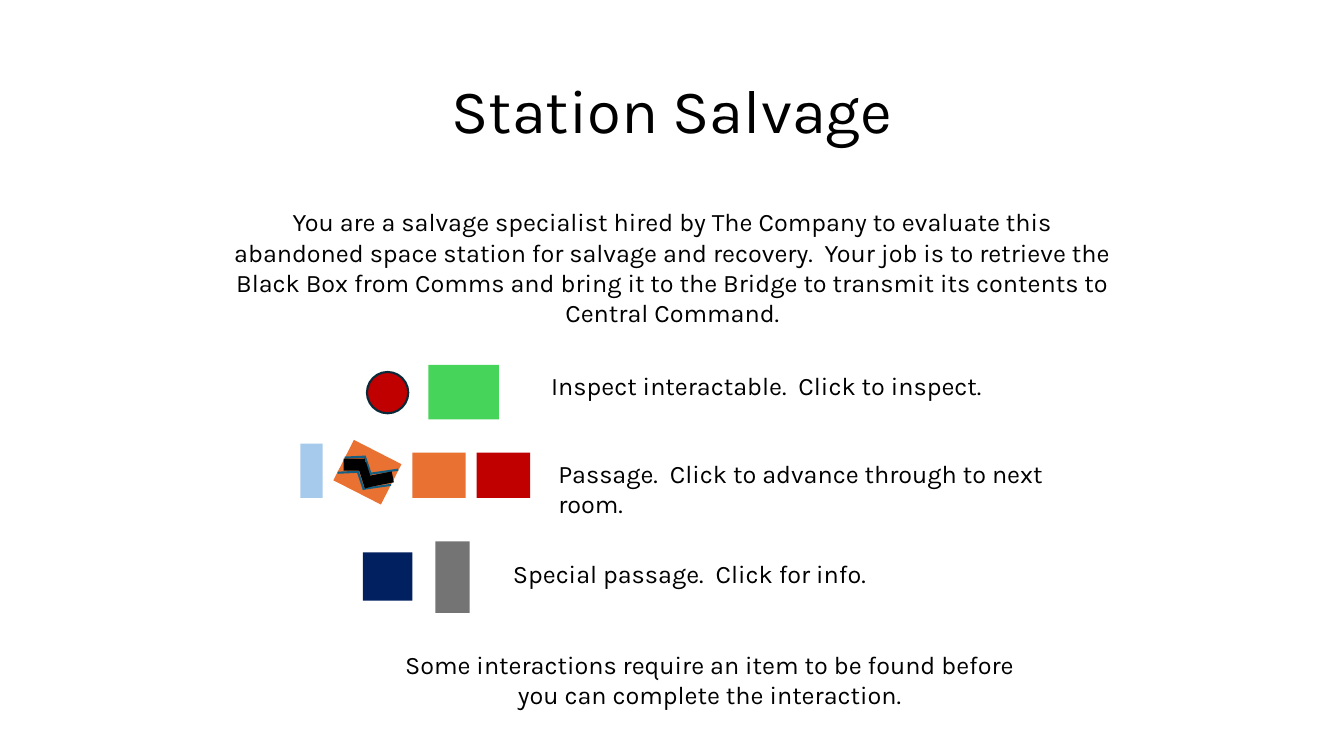
from lxml import etree
from pptx import Presentation, util as u
from pptx.dml.color import RGBColor
from pptx.enum import shapes, text
from pptx.oxml.ns import qn

FONT = "Karla"
BLACK, ORANGE, RED, EDGE = "000000", "E97132", "C00000", "156082"
RECT, OVAL = shapes.MSO_SHAPE.RECTANGLE, shapes.MSO_SHAPE.OVAL
CENTER = text.PP_ALIGN.CENTER


def color(value):
    return RGBColor.from_string(value)


def grid(*cells):
    """Turn columns and rows of a tenth of an inch into lengths."""
    return [u.Inches(cell / 10) for cell in cells]


def write(frame, words, size=18, align=None, spacing=None):
    para = frame.paragraphs[0]
    para.alignment = align
    para.line_spacing = spacing
    span = para.add_run()
    span.text = words
    span.font.name = FONT
    span.font.size = u.Pt(size)
    span.font.color.rgb = color(BLACK)


class Slide:
    def __init__(self, deck):
        self.page = deck.slides.add_slide(deck.slide_layouts[5])
        self.page.background.fill.solid()
        self.page.background.fill.fore_color.rgb = color("FFFFFF")

    def title(self, words, *place):
        box = self.page.shapes.title
        box.left, box.top, box.width, box.height = grid(*place)
        box.text_frame.vertical_anchor = text.MSO_ANCHOR.MIDDLE
        write(box.text_frame, words, size=44, align=CENTER, spacing=0.9)

    def label(self, words, *place, align=None):
        frame = self.page.shapes.add_textbox(*grid(*place)).text_frame
        frame.word_wrap = True
        frame.auto_size = text.MSO_AUTO_SIZE.SHAPE_TO_FIT_TEXT
        write(frame, words, align=align)

    def block(self, fill, *place, kind=RECT, turn=0, outline=None, group=None):
        parent = group or self.page
        box = parent.shapes.add_shape(kind, *grid(*place))
        box.shadow.inherit = False
        box.rotation = turn
        box.fill.solid()
        box.fill.fore_color.rgb = color(fill)
        if outline:
            box.line.color.rgb = color(outline)
            box.line.width = u.Pt(1.5)
        else:
            box.line.fill.background()

    def stroke(self, group, *ends):
        line = group.shapes.add_connector(shapes.MSO_CONNECTOR.STRAIGHT, *grid(*ends))
        line.line.color.rgb = color(EDGE)
        line.line.width = u.Pt(1.5)
        etree.SubElement(line._element.spPr, qn("a:effectLst"))

    def broken_door(self):
        """Tilted door crossed by a black crack with two zigzag edges."""
        door = self.page.shapes.add_group_shape()
        self.block(ORANGE, 33.8, 44.6, 5.3, 4.5, turn=27, group=door)
        zigzag = [(38.8, 48.1, 36, 48.5), (33.5, 46.9, 35.6, 46.8),
                  (35.5, 46.8, 36.1, 48.6)]
        for right, down in [(0, 0), (0.7, -1.5)]:
            for x1, y1, x2, y2 in zigzag:
                self.stroke(door, x1 + right, y1 + down, x2 + right, y2 + down)
        for place, turn in [((34.1, 45.5, 2.1, 1.2), 0),
                            ((35, 46.7, 2.5, 0.9), 72.4),
                            ((36.5, 47, 2.5, 1.1), 349)]:
            self.block(BLACK, *place, turn=turn, group=door)


def main():
    deck = Presentation()
    deck.slide_width, deck.slide_height = grid(133.33, 75)
    slide = Slide(deck)
    slide.title("Station Salvage", 9.2, 4, 115, 14.5)

    slide.block(RED, 36.4, 36.9, 4.1, 4.1, kind=OVAL, outline="092A39")
    slide.broken_door()
    for left, fill in [(40.9, ORANGE), (47.3, RED)]:
        slide.block(fill, left, 44.9, 5.3, 4.5)
    slide.block("002060", 36, 54.8, 4.9, 4.8)
    slide.block("747474", 43.2, 53.7, 3.4, 7.1)
    slide.block("47D45A", 42.5, 36.2, 7, 5.4)
    slide.block("A6CAEC", 29.8, 44, 2.2, 5.4, turn=180)

    slide.label("Inspect interactable.  Click to inspect.", 53.7, 36.2, 45, 4)
    slide.label("Passage.  Click to advance through to next room.",
                54.4, 45, 56.3, 4)
    slide.label("Special passage.  Click for info.", 49.9, 54.9, 56.3, 4)
    slide.label("Some interactions require an item to be found before you can "
                "complete the interaction.", 37.8, 63.9, 65.2, 7.1, align=CENTER)
    slide.label("You are a salvage specialist hired by The Company to evaluate "
                "this abandoned space station for salvage and recovery.  Your job "
                "is to retrieve the Black Box from Comms and bring it to the "
                "Bridge to transmit its contents to Central Command.",
                22.1, 20, 89.2, 10.1, align=CENTER)
    deck.save("out.pptx")


if __name__ == "__main__":
    main()
